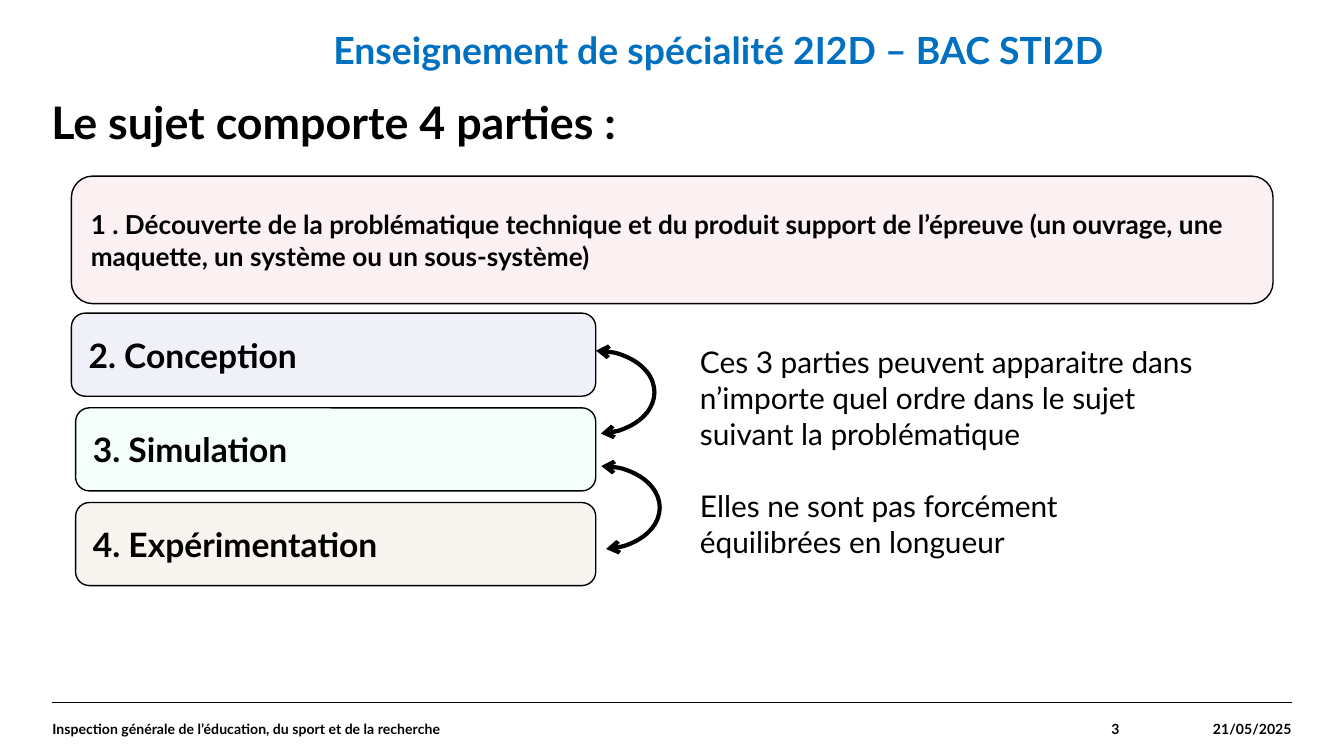
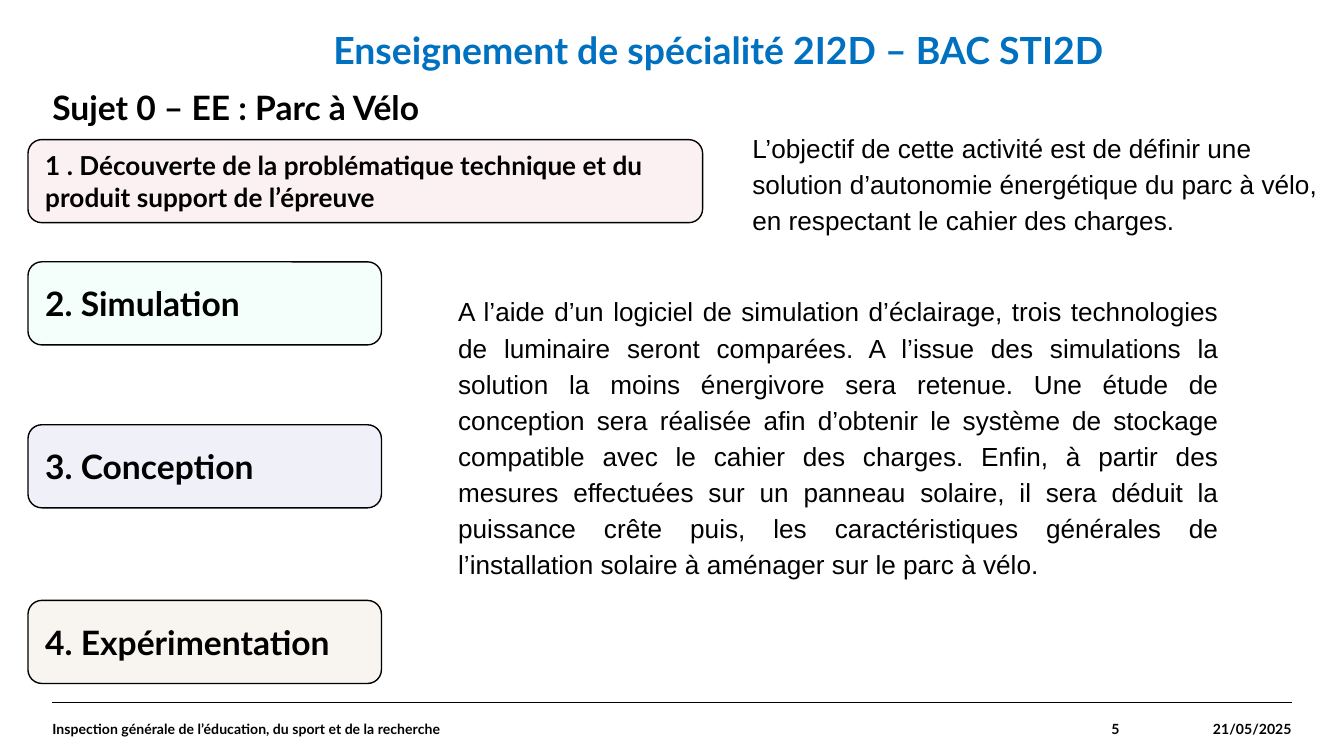
from lxml import etree
from pptx import Presentation
from pptx.dml.color import RGBColor
from pptx.enum import shapes, text
from pptx.oxml import ns
from pptx.util import Cm, Pt

COLORS = {
    "ink": "000000",
    "blue": "0070C0",
    "intro": "F2C9D1",
    "design": "C6C6EA",
    "model": "D5FFF4",
    "trial": "E7D4C6",
}
ALIGN = text.PP_ALIGN
SHAPE = shapes.MSO_SHAPE
STEP_H = 1.57


def rgb(name):
    return RGBColor.from_string(COLORS[name])


def sub(parent, tag, **attrs):
    return etree.SubElement(parent, ns.qn(tag), attrs)


def write(shape, *lines, size=14, font="Lato", color="ink", bold=False,
          align=ALIGN.LEFT, middle=False, inset=True, spacing=None,
          before=0, after=0, left=0):
    """Fill a shape with paragraphs; before applies from the second one on."""
    frame = shape.text_frame
    frame.word_wrap = True
    frame.vertical_anchor = (text.MSO_ANCHOR.MIDDLE if middle
                             else text.MSO_ANCHOR.TOP)
    if not inset:
        frame.margin_left = frame.margin_right = 0
        frame.margin_top = frame.margin_bottom = 0
    for i, line in enumerate(lines):
        para = frame.add_paragraph() if i else frame.paragraphs[0]
        para.alignment = align
        if spacing:
            para.line_spacing = spacing
        if i and before:
            para.space_before = Pt(before)
        if after:
            para.space_after = Pt(after)
        if left:
            props = para._p.get_or_add_pPr()
            props.set("marL", str(Cm(left)))
            props.set("indent", "0")
        run = para.add_run()
        run.text = line
        run.font.name, run.font.size, run.font.bold = font, Pt(size), bold
        run.font.color.rgb = rgb(color)


def label(slide, box, *lines, **style):
    write(slide.shapes.add_textbox(*map(Cm, box)), *lines, **style)


def outline(slide, kind, box, width):
    shape = slide.shapes.add_shape(kind, *map(Cm, box))
    shape.shadow.inherit = False
    shape.line.color.rgb = rgb("ink")
    shape.line.width = Pt(width)
    return shape


def step(slide, box, words, color, size=18):
    """Rounded box with a pale tint, one per part of the exam."""
    shape = outline(slide, SHAPE.ROUNDED_RECTANGLE, box, 0.75)
    shape.fill.solid()
    shape.fill.fore_color.rgb = rgb(color)
    tint = shape._element.spPr.find(".//" + ns.qn("a:srgbClr"))
    sub(tint, "a:alpha", val="25000")
    write(shape, words, size=size, bold=True, middle=True)


def swap(slide, box):
    """Curved arrow with a head at both ends."""
    arc = outline(slide, SHAPE.ARC, box, 2.25)
    arc.fill.background()
    arc.adjustments[0], arc.adjustments[1] = 162, 49.97
    for end in ("a:headEnd", "a:tailEnd"):
        sub(arc.line._get_or_add_ln(), end, type="arrow")


def footer(slide, box, page):
    x, y, w, h = box
    rule = slide.shapes.add_connector(
        shapes.MSO_CONNECTOR.STRAIGHT, Cm(x), Cm(y), Cm(x + w), Cm(y))
    rule.line.color.rgb = rgb("ink")
    rule.line.width = Pt(0.8)
    sub(rule._element.spPr, "a:effectLst")
    cells = (
        ("Inspection générale de l’éducation, du sport et de la recherche",
         16.41, ALIGN.LEFT),
        (page, 3.76, ALIGN.RIGHT),
        ("21/05/2025", 3.25, ALIGN.RIGHT),
    )
    for words, width, align in cells:
        label(slide, (x, y, width, h), words, size=7.5, bold=True,
              align=align, middle=True, inset=False)
        x += width


def base(deck, page, title, box, size):
    """Add a slide with its banner, title and footer."""
    slide = deck.slides.add_slide(deck.slide_layouts[6])
    label(slide, (6.3, 0.51, 15.8, 0.99),
          "Enseignement de spécialité 2I2D – BAC STI2D",
          size=20, color="blue", bold=True, inset=False)
    label(slide, box, title, size=size, bold=True, spacing=0.9, inset=False)
    footer(slide, (0.99, 13.28, 23.42, 0.99), page)
    return slide


def parts(slide, box):
    """The four parts, with arrows between those that can change places."""
    x, y, w, h = box
    step(slide, (x, y, w, 2.41),
         "1 . Découverte de la problématique technique et du produit support "
         "de l’épreuve (un ouvrage, une maquette, un système ou un "
         "sous-système)", "intro", 14)
    rows = (("2. Conception", "design", 0),
            ("3. Simulation", "model", 0.08),
            ("4. Expérimentation", "trial", 0.08))
    for i, (words, color, shift) in enumerate(rows):
        step(slide, (x + shift, y + 2.59 + i * 1.79, 9.91 - shift, STEP_H),
             words, color)
    for dx, dy in ((8.81, 3.3), (8.91, 5.48)):
        swap(slide, (x + dx, y + dy, 2.21, STEP_H))
    label(slide, (x + 11.63, y + 3.05, 10.03, 4.37),
          "Ces 3 parties peuvent apparaitre dans n’importe quel ordre dans "
          "le sujet suivant la problématique",
          "Elles ne sont pas forcément équilibrées en longueur",
          size=16, before=19.2)


def sample(slide, box):
    """The parts of the sample exam, with its aim and its course."""
    x, y, w, h = box
    step(slide, (x, y, 12.75, STEP_H),
         "1 . Découverte de la problématique technique et du produit support "
         "de l’épreuve", "intro", 14)
    rows = (("2. Simulation", "model", 2.31),
            ("3. Conception", "design", 5.39),
            ("4. Expérimentation", "trial", 8.71))
    for words, color, dy in rows:
        step(slide, (x, y + dy, 6.68, STEP_H), words, color)
    prose = dict(font="Arial", spacing=1.15, after=12)
    label(slide, (x + 12.17, y - 0.35, 12.7, 2.26),
          "L’objectif de cette activité est de définir une solution "
          "d’autonomie énergétique du parc à vélo, en respectant le cahier "
          "des charges.", left=1.27, **prose)
    label(slide, (x + 7.88, y + 2.74, 14.88, 5.72),
          "A l’aide d’un logiciel de simulation d’éclairage, trois "
          "technologies de luminaire seront comparées. A l’issue des "
          "simulations la solution la moins énergivore sera retenue. Une "
          "étude de conception sera réalisée afin d’obtenir le système de "
          "stockage compatible avec le cahier des charges. Enfin, à partir "
          "des mesures effectuées sur un panneau solaire, il sera déduit la "
          "puissance crête puis, les caractéristiques générales de "
          "l’installation solaire à aménager sur le parc à vélo.",
          align=ALIGN.JUSTIFY, **prose)


def main():
    deck = Presentation()
    deck.slide_width, deck.slide_height = Cm(25.4), Cm(14.29)
    slide = base(deck, "3", "Le sujet comporte 4 parties :",
                 (0.97, 1.9, 23.39, 0.99), 24)
    parts(slide, (1.35, 3.33, 22.71, 7.74))
    slide = base(deck, "5", "Sujet 0 – EE : Parc à Vélo",
                 (0.99, 1.73, 23.39, 0.99), 18)
    sample(slide, (0.53, 2.64, 24.87, 10.28))
    deck.save("out.pptx")


if __name__ == "__main__":
    main()
